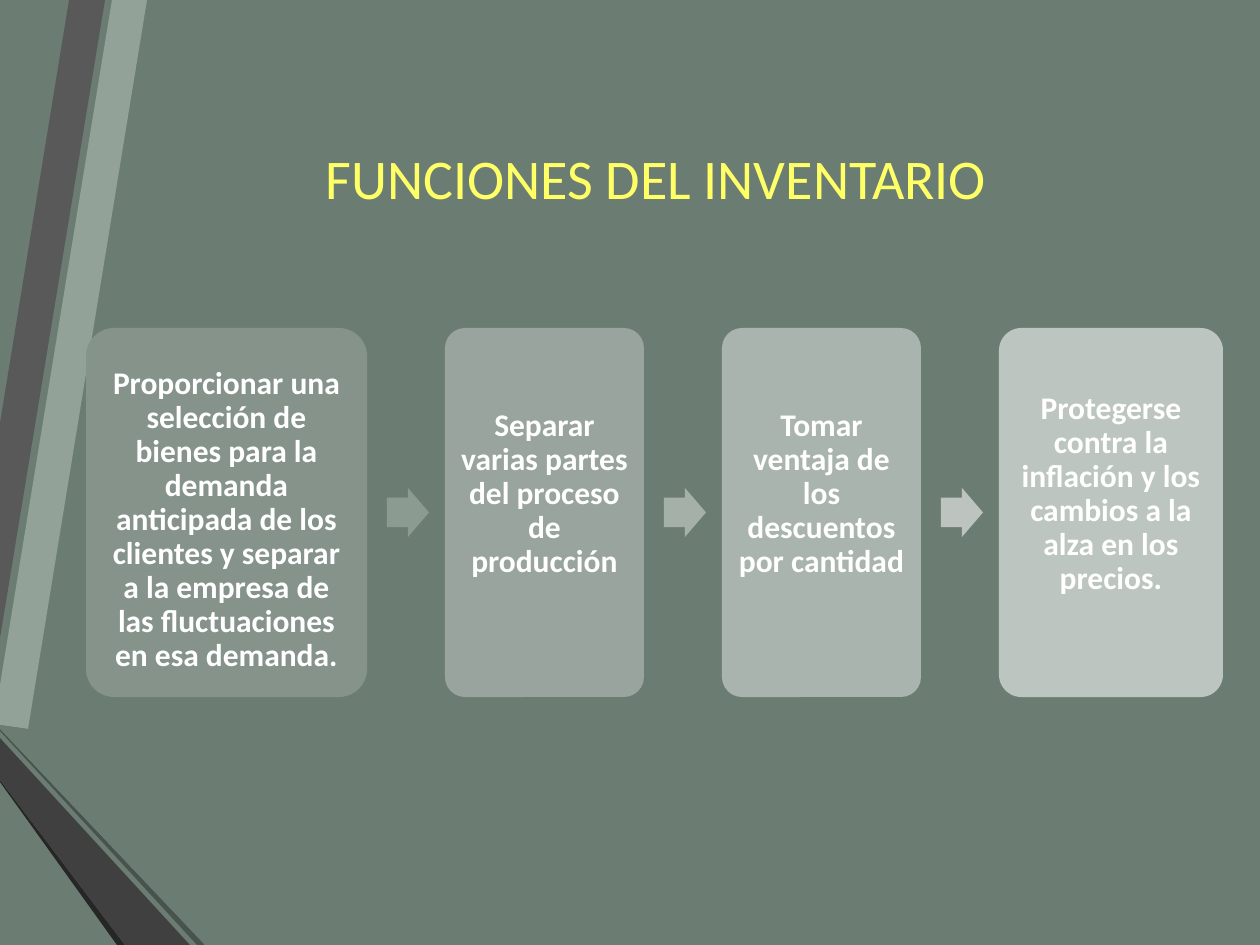
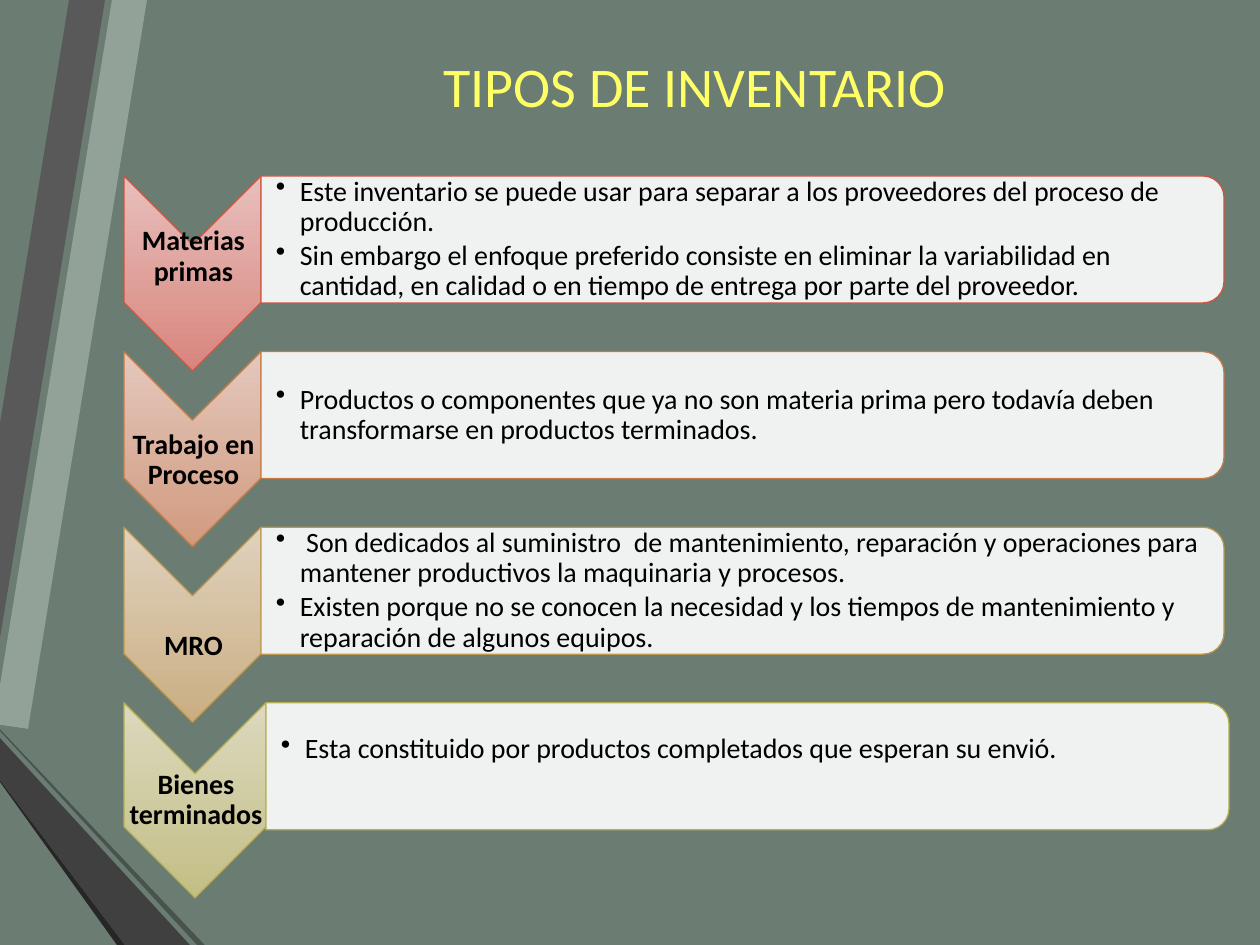
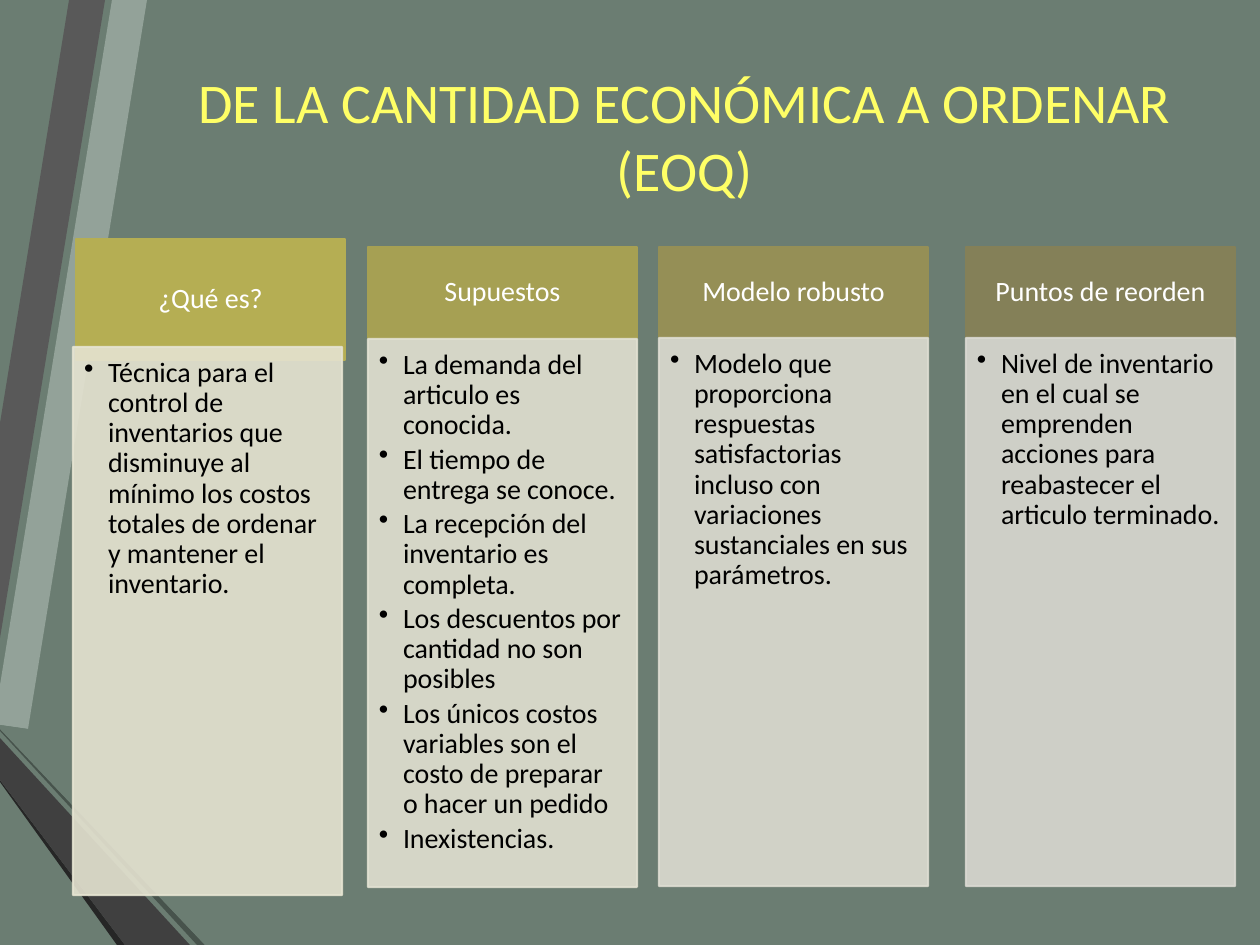
from lxml.etree import SubElement
from pptx import Presentation
from pptx.dml.color import RGBColor
from pptx.enum.shapes import MSO_SHAPE as Preset
from pptx.enum.text import MSO_ANCHOR as Anchor, PP_ALIGN as Align
from pptx.oxml.ns import qn
from pptx.util import Pt

SCALE = 914400 / 126
WIDTH, HEIGHT = 1260, 945
BACKGROUND, BLACK, WHITE = "6B7D72", "000000", "FFFFFF"

RIBBONS = [
    ("93A299", [(0, 685), (0, 725), (28, 729), (147, 0), (112, 0)]),
    ("595959", [(105, 0), (69, 0), (0, 423), (0, 638)]),
    ("262626", [(0, 780), (0, 782), (117, 945), (125, 945)]),
    ("47534C", [(0, 729), (0, 731), (197, 945), (205, 945)]),
    (BACKGROUND, [(0, 729), (205, 945), (294, 945), (28, 729), (0, 725)]),
    ("404040", [(0, 780), (125, 945), (190, 945), (0, 738)]),
]

# text, fill, width, top and bottom inset, fill of the arrow that follows
FUNCTIONS = [
    ("Proporcionar una selección de bienes para la demanda anticipada de los "
     "clientes y separar a la empresa de las fluctuaciones en esa demanda.",
     "85938B", 281, 25, 9, "8C9B92"),
    ("Separar varias partes del proceso de producción",
     "98A49D", 199, 9, 45, "A5B0A9"),
    ("Tomar ventaja de los descuentos por cantidad",
     "AAB4AE", 199, 9, 45, "BDC4C0"),
    ("Protegerse contra la inflación y los cambios a la alza en los precios.",
     "BDC5C0", 224, 9, 45, None),
]

# label, label drop, chevron width, light, dark, line, text shift, bullets
TYPES = [
    ("Materias primas", 51, 137, "E8BFBC", "D8857D", "CF543F", 0, [
        "Este inventario se puede usar para separar a los proveedores del "
        "proceso de producción.",
        "Sin embargo el enfoque preferido consiste en eliminar la variabilidad "
        "en cantidad, en calidad o en tiempo de entrega por parte del proveedor."]),
    ("Trabajo en Proceso", 79, 137, "E4C8BC", "D19A7F", "C67A46", 0, [
        "Productos o componentes que ya no son materia prima pero todavía deben "
        "transformarse en productos terminados."]),
    ("MRO", 89, 137, "E0D1BD", "CAAE82", "BE984C", 0, [
        " Son dedicados al suministro  de mantenimiento, reparación y "
        "operaciones para mantener productivos la maquinaria y procesos.",
        "Existen porque no se conocen la necesidad y los tiempos de "
        "mantenimiento y reparación de algunos equipos."]),
    ("Bienes terminados", 68, 142, "DCD9BE", "C3BE85", "B5AE53", -17, [
        "Esta constituido por productos completados que esperan su envió."]),
]

# heading, its fill and rectangle, body fill, body left and top, bullets
COLUMNS = [
    ("¿Qué es?", "B5AE53", (76, 239, 269, 121), "E5E3D1", (73, 347), [
        "Técnica para el control de inventarios que disminuye al mínimo los "
        "costos totales de ordenar y mantener el inventario."]),
    ("Supuestos", "A6A053", (368, 247, 269, 91), "E1E0D1", (368, 339), [
        "La demanda del articulo es conocida.",
        "El tiempo de entrega se conoce.",
        "La recepción del inventario es completa.",
        "Los descuentos por cantidad no son posibles",
        "Los únicos costos variables son el costo de preparar o hacer un pedido",
        "Inexistencias."]),
    ("Modelo robusto", "958F56", (659, 247, 269, 91), "DDDCD1", (659, 338), [
        "Modelo que proporciona respuestas satisfactorias incluso con "
        "variaciones sustanciales en sus parámetros."]),
    ("Puntos de reorden", "848058", (966, 247, 269, 91), "D9D8D1", (966, 338), [
        "Nivel de inventario en el cual se emprenden acciones para reabastecer "
        "el articulo terminado."]),
]


def px(length):
    return round(length * SCALE)


def color(code):
    return RGBColor.from_string(code)


def fade(element):
    """Make every colour inside the element 90 % opaque."""
    for node in list(element.iter(qn("a:srgbClr"))):
        SubElement(node, qn("a:alpha"), val="90000")


class Canvas:
    """Holds the deck, its style and the current slide."""

    font = "Calibri"
    title_color = "FFFF66"

    def __init__(self):
        self.deck = Presentation()
        self.deck.slide_width, self.deck.slide_height = px(WIDTH), px(HEIGHT)
        self.layout = self.deck.slide_layouts[6]
        self.page = None

    def new_page(self, title, rect):
        self.page = self.deck.slides.add_slide(self.layout)
        self.label(title, rect, 32, self.title_color, inset=(13, 6, 13, 6), spacing=1)

    def decorate_layout(self):
        """Draw the background and ribbons once, on the shared layout."""
        fill = self.layout.background.fill
        fill.solid()
        fill.fore_color.rgb = color(BACKGROUND)
        for code, (start, *points) in RIBBONS:
            builder = self.page.shapes.build_freeform(*start, scale=SCALE)
            builder.add_line_segments(points, close=True)
            ribbon = builder.convert_to_shape()
            self.paint(ribbon, code)
            self.layout.shapes.element.append(ribbon.element)

    def paint(self, shape, fill, line=None, width=1.25):
        shape.shadow.inherit = False
        if fill:
            shape.fill.solid()
            shape.fill.fore_color.rgb = color(fill)
        if line:
            shape.line.color.rgb = color(line)
            shape.line.width = Pt(width)
        else:
            shape.line.fill.background()

    def shape(self, preset, rect, fill, line=None, adjust=(), width=1.25):
        shape = self.page.shapes.add_shape(preset, *map(px, rect))
        self.paint(shape, fill, line, width)
        for index, value in enumerate(adjust):
            shape.adjustments[index] = value
        return shape

    def turned(self, preset, rect, fill, line):
        """Add a shape turned by 90 degrees that covers rect once turned."""
        left, top, width, height = rect
        shift = (width - height) / 2
        frame = left + shift, top - shift, height, width
        shape = self.shape(preset, frame, fill, line, width=0.75)
        shape.rotation = 90
        return shape

    def gradient(self, shape, light, dark):
        shape.fill.gradient()
        shape.fill.gradient_angle = 270
        for stop, code in zip(shape.fill.gradient_stops, (light, dark)):
            stop.color.rgb = color(code)
        shape.element.spPr.find(qn("a:gradFill")).set("rotWithShape", "0")

    def text_box(self, rect):
        return self.page.shapes.add_textbox(*map(px, rect))

    def label(self, text, rect, *style, **options):
        self.add_text(self.text_box(rect), [text], *style, **options)

    def add_text(self, box, texts, size, code, bold=False, inset=(1, 1, 1, 1),
                 anchor=Anchor.MIDDLE, bullets=False, spacing=0.9):
        frame = box.text_frame
        frame.word_wrap = True
        frame.vertical_anchor = anchor
        (frame.margin_left, frame.margin_top,
         frame.margin_right, frame.margin_bottom) = map(px, inset)
        for index, text in enumerate(texts):
            para = frame.add_paragraph() if index else frame.paragraphs[0]
            para.alignment = Align.LEFT if bullets else Align.CENTER
            para.line_spacing = spacing
            if bullets:
                para.space_after = Pt(2.4)
                properties = para._p.get_or_add_pPr()
                properties.set("marL", str(px(24)))
                properties.set("indent", str(px(-24)))
                SubElement(properties, qn("a:buChar"), char="•")
            span = para.add_run()
            span.text = text
            span.font.name, span.font.size = self.font, Pt(size)
            span.font.bold = bold
            span.font.color.rgb = color(code)


def add_functions(canvas):
    left, top, height, gap = 86, 328, 369, 78
    arrow_width, arrow_height = 42, 49
    for text, fill, width, above, below, arrow_fill in FUNCTIONS:
        card = canvas.shape(Preset.ROUNDED_RECTANGLE, (left, top, width, height),
                            fill, adjust=[0.1])
        canvas.add_text(card, [text], 18, WHITE, bold=True, inset=(8, above, 8, below))
        left += width
        if arrow_fill:
            arrow_top = top + (height - arrow_height) / 2
            canvas.shape(Preset.RIGHT_ARROW,
                         (left + 20, arrow_top, arrow_width, arrow_height),
                         arrow_fill, adjust=[0.6, 0.5])
        left += gap


def add_types(canvas):
    left, first_top, pitch, panel_height = 124, 176, 175.6, 127
    for row, (name, drop, width, light, dark, line, shift, bullets) in enumerate(TYPES):
        top = first_top + row * pitch
        chevron = canvas.turned(Preset.CHEVRON, (left, top, width, 195), None, line)
        canvas.gradient(chevron, light, dark)
        canvas.label(name, (left, top + drop, width + 2, 60), 16, BLACK, bold=True)
        panel_left = left + width
        panel = canvas.turned(Preset.ROUND_2_SAME_RECTANGLE,
                              (panel_left, top, 963, panel_height), WHITE, line)
        fade(panel.element.spPr.find(qn("a:solidFill")))
        box = canvas.text_box((panel_left, top + shift, 956, panel_height))
        canvas.add_text(box, bullets, 16, BLACK, inset=(15, 1, 1, 1), bullets=True)


def add_columns(canvas):
    for heading, fill, rect, body_fill, corner, bullets in COLUMNS:
        header = canvas.shape(Preset.RECTANGLE, rect, fill, fill)
        canvas.add_text(header, [heading], 16, WHITE, inset=(15, 9, 15, 9))
        body = canvas.shape(Preset.RECTANGLE, (*corner, 269, 548), body_fill, body_fill)
        fade(body.element.spPr)
        canvas.add_text(body, bullets, 16, BLACK, inset=(11, 11, 15, 18),
                        anchor=Anchor.TOP, bullets=True)


def main():
    canvas = Canvas()
    canvas.new_page("FUNCIONES DEL INVENTARIO", (184, 86, 945, 183))
    canvas.decorate_layout()
    add_functions(canvas)
    canvas.new_page("TIPOS DE INVENTARIO", (164, 16, 1062, 139))
    add_types(canvas)
    canvas.new_page("DE LA CANTIDAD ECONÓMICA A ORDENAR (EOQ)", (154, 26, 1062, 218))
    add_columns(canvas)
    canvas.deck.save("out.pptx")


if __name__ == "__main__":
    main()
